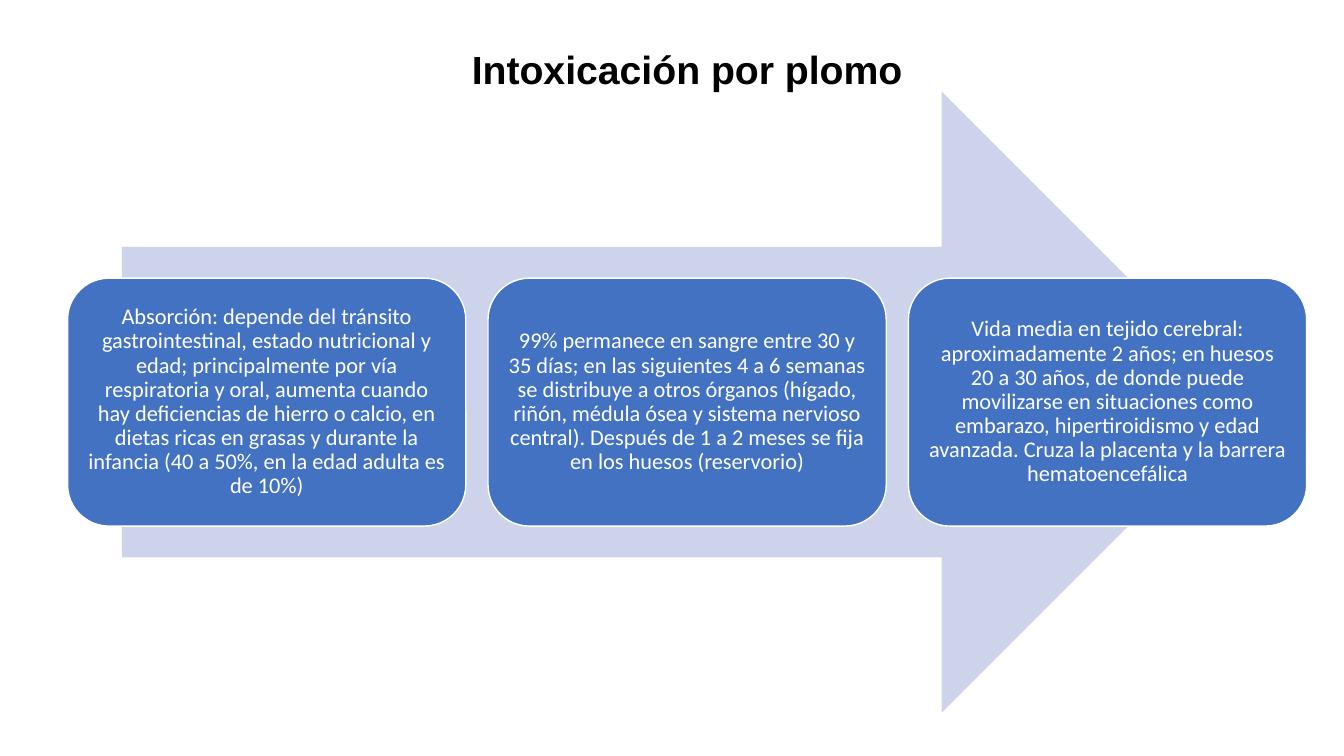
from dataclasses import dataclass

from pptx import Presentation
from pptx.dml.color import RGBColor
from pptx.enum import shapes, text
from pptx.util import Inches, Pt


@dataclass
class Box:
    left: float
    top: float
    width: float
    height: float

    def emu(self) -> tuple:
        return tuple(Inches(v) for v in (self.left, self.top, self.width, self.height))


@dataclass
class Lettering:
    font: str
    size: float
    color: str
    bold: bool = False


TITLE = Lettering("Arial", 28, "000000", True)
STAGE = Lettering("Calibri", 16, "FFFFFF")
STAGE_LEFT, STAGE_STEP = 0.67, 4.17
STAGES = [
    "Absorción: depende del tránsito gastrointestinal, estado nutricional y edad; "
    "principalmente por vía respiratoria y oral, aumenta cuando hay deficiencias de "
    "hierro o calcio, en dietas ricas en grasas y durante la infancia (40 a 50%, en la "
    "edad adulta es de 10%)",
    "99% permanece en sangre entre 30 y 35 días; en las siguientes 4 a 6 semanas se "
    "distribuye a otros órganos (hígado, riñón, médula ósea y sistema nervioso central). "
    "Después de 1 a 2 meses se fija en los huesos (reservorio)",
    "Vida media en tejido cerebral: aproximadamente 2 años; en huesos 20 a 30 años, de "
    "donde puede movilizarse en situaciones como embarazo, hipertiroidismo y edad "
    "avanzada. Cruza la placenta y la barrera hematoencefálica",
]


def rgb(value: str) -> RGBColor:
    return RGBColor.from_string(value)


def write(shape, words: str, style: Lettering, inset_x: float, inset_y: float) -> None:
    frame = shape.text_frame
    frame.word_wrap = True
    frame.vertical_anchor = text.MSO_ANCHOR.MIDDLE
    frame.margin_left = frame.margin_right = Inches(inset_x)
    frame.margin_top = frame.margin_bottom = Inches(inset_y)
    paragraph = frame.paragraphs[0]
    paragraph.alignment = text.PP_ALIGN.CENTER
    paragraph.line_spacing = 0.9
    run = paragraph.add_run()
    run.text = words
    run.font.name = style.font
    run.font.size = Pt(style.size)
    run.font.bold = style.bold
    run.font.color.rgb = rgb(style.color)


def draw(slide, kind, box: Box, fill: str, adjustments: list[float]):
    shape = slide.shapes.add_shape(kind, *box.emu())
    shape.shadow.inherit = False
    for index, value in enumerate(adjustments):
        shape.adjustments[index] = value
    shape.fill.solid()
    shape.fill.fore_color.rgb = rgb(fill)
    shape.line.fill.background()
    return shape


def draw_stage(slide, position: int, words: str) -> None:
    box = Box(STAGE_LEFT + position * STAGE_STEP, 2.76, 3.95, 2.46)
    stage = draw(slide, shapes.MSO_SHAPE.ROUNDED_RECTANGLE, box, "4372C3", [0.167])
    stage.line.color.rgb = rgb("FFFFFF")
    stage.line.width = Pt(1)
    write(stage, words, STAGE, 0.08, 0.07)


def main() -> None:
    deck = Presentation()
    deck.slide_width, deck.slide_height = Inches(13.33), Inches(7.5)
    slide = deck.slides.add_slide(deck.slide_layouts[6])
    heading = slide.shapes.add_textbox(*Box(3.79, 0.3, 6.05, 0.83).emu())
    write(heading, "Intoxicación por plomo", TITLE, 0.1, 0.05)
    draw(slide, shapes.MSO_SHAPE.RIGHT_ARROW, Box(1.21, 0.91, 11.21, 6.16),
         "CCD3EA", [0.5, 0.5])
    for position, words in enumerate(STAGES):
        draw_stage(slide, position, words)
    deck.save("out.pptx")


if __name__ == "__main__":
    main()
